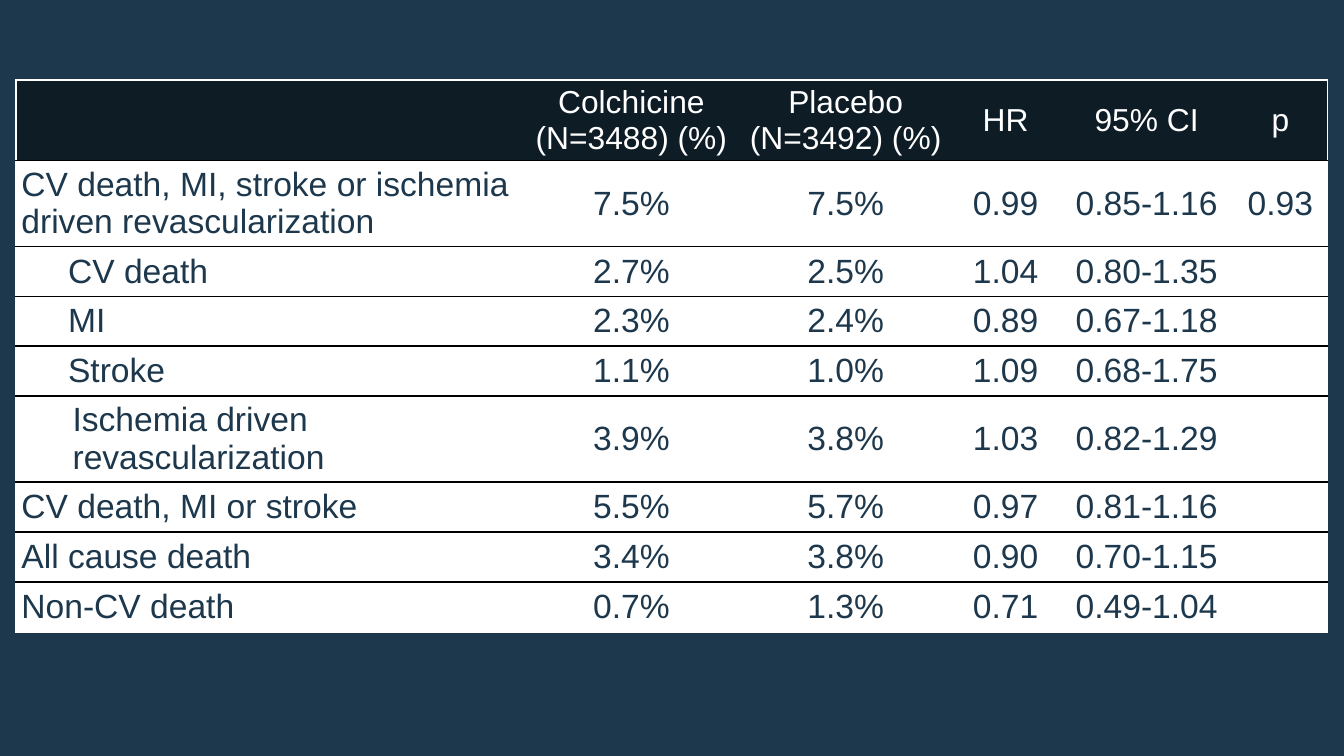
from dataclasses import dataclass

from lxml.etree import SubElement
from pptx import Presentation
from pptx.dml.color import RGBColor
from pptx.enum.text import MSO_ANCHOR, PP_ALIGN
from pptx.oxml.ns import qn
from pptx.table import Table, _Cell
from pptx.util import Pt

NAVY = RGBColor(0x1D, 0x38, 0x4C)
DARK = RGBColor(0x0E, 0x1C, 0x26)
WHITE = RGBColor(0xFF, 0xFF, 0xFF)
BLACK = RGBColor(0x00, 0x00, 0x00)
FONT = "Arial"
PLAIN_STYLE = "{2D5ABB26-0587-4C30-8999-92F81FD0307C}"  # no style, no grid

LEFT, TOP = 8.6, 42.8
COLUMN_WIDTHS = (271.4, 116.6, 113, 58.3, 92.9, 50.4)
HEADER_HEIGHT, SINGLE_HEIGHT, DOUBLE_HEIGHT = 43.2, 25.6, 46


@dataclass(frozen=True)
class Outcome:
    name: str
    colchicine: str
    placebo: str
    hazard_ratio: str
    interval: str
    p_value: str = ""
    indent: float = 0
    height: float = SINGLE_HEIGHT

    def texts(self) -> tuple[str, ...]:
        return (self.name, self.colchicine, self.placebo,
                self.hazard_ratio, self.interval, self.p_value)


HEADER = Outcome("", "Colchicine\n(N=3488) (%)", "Placebo\n(N=3492) (%)",
                 "HR", "95% CI", "p", height=HEADER_HEIGHT)
OUTCOMES = (
    Outcome("CV death, MI, stroke or ischemia driven revascularization",
            "7.5%", "7.5%", "0.99", "0.85-1.16", "0.93", height=DOUBLE_HEIGHT),
    Outcome("CV death", "2.7%", "2.5%", "1.04", "0.80-1.35", indent=25),
    Outcome("MI", "2.3%", "2.4%", "0.89", "0.67-1.18", indent=25),
    Outcome("Stroke", "1.1%", "1.0%", "1.09", "0.68-1.75", indent=25),
    Outcome("Ischemia driven revascularization",
            "3.9%", "3.8%", "1.03", "0.82-1.29", indent=27.4, height=DOUBLE_HEIGHT),
    Outcome("CV death, MI or stroke", "5.5%", "5.7%", "0.97", "0.81-1.16"),
    Outcome("All cause death", "3.4%", "3.8%", "0.90", "0.70-1.15"),
    Outcome("Non-CV death", "0.7%", "1.3%", "0.71", "0.49-1.04"),
)


def set_border(cell: _Cell, side: str, color: RGBColor) -> None:
    """Draw one border; call in the order L, R, T, B, before the fill is set."""
    line = SubElement(cell._tc.get_or_add_tcPr(), qn(f"a:ln{side}"), w=str(Pt(1)))
    fill = SubElement(line, qn("a:solidFill"))
    SubElement(fill, qn("a:srgbClr"), val=str(color))


def write_cell(cell: _Cell, text: str, size: float, color: RGBColor,
               align: PP_ALIGN, indent: float = 0) -> None:
    cell.margin_left = cell.margin_right = Pt(2.9)
    cell.margin_top = cell.margin_bottom = Pt(2.4)
    cell.vertical_anchor = MSO_ANCHOR.MIDDLE
    cell.text_frame.text = text
    for para in cell.text_frame.paragraphs:
        if indent:
            para._p.get_or_add_pPr().set("marL", str(Pt(indent)))
        para.alignment = align
        para.font.size = Pt(size)
        for span in para.runs:
            span.font.name = FONT
            span.font.size = Pt(size)
            span.font.color.rgb = color


def fill_row(table: Table, row: int, outcome: Outcome) -> None:
    is_header = row == 0
    last_row, last_column = len(table.rows) - 1, len(table.columns) - 1
    table.rows[row].height = Pt(outcome.height)
    for column, text in enumerate(outcome.texts()):
        cell = table.cell(row, column)
        first = column == 0
        # White frame outside, black rules between rows
        if first:
            set_border(cell, "L", WHITE)
        if column == last_column:
            set_border(cell, "R", WHITE)
        set_border(cell, "T", WHITE if is_header else BLACK)
        set_border(cell, "B", WHITE if row == last_row else BLACK)
        cell.fill.solid()
        cell.fill.fore_color.rgb = DARK if is_header else WHITE
        write_cell(cell, text, 17 if is_header else 18,
                   WHITE if is_header else NAVY,
                   PP_ALIGN.LEFT if first else PP_ALIGN.CENTER,
                   outcome.indent if first else 0)


def main() -> None:
    deck = Presentation()
    deck.slide_width, deck.slide_height = Pt(720), Pt(405)
    page = deck.slides.add_slide(deck.slide_layouts[6])
    page.background.fill.solid()
    page.background.fill.fore_color.rgb = NAVY

    # Results table
    rows = (HEADER, *OUTCOMES)
    frame = page.shapes.add_table(
        len(rows), len(COLUMN_WIDTHS), Pt(LEFT), Pt(TOP),
        Pt(sum(COLUMN_WIDTHS)), Pt(sum(row.height for row in rows)))
    table = frame.table
    table.horz_banding = False
    table._tbl.tblPr.find(qn("a:tableStyleId")).text = PLAIN_STYLE
    for column, width in zip(table.columns, COLUMN_WIDTHS):
        column.width = Pt(width)
    for index, outcome in enumerate(rows):
        fill_row(table, index, outcome)

    deck.save("out.pptx")


if __name__ == "__main__":
    main()
